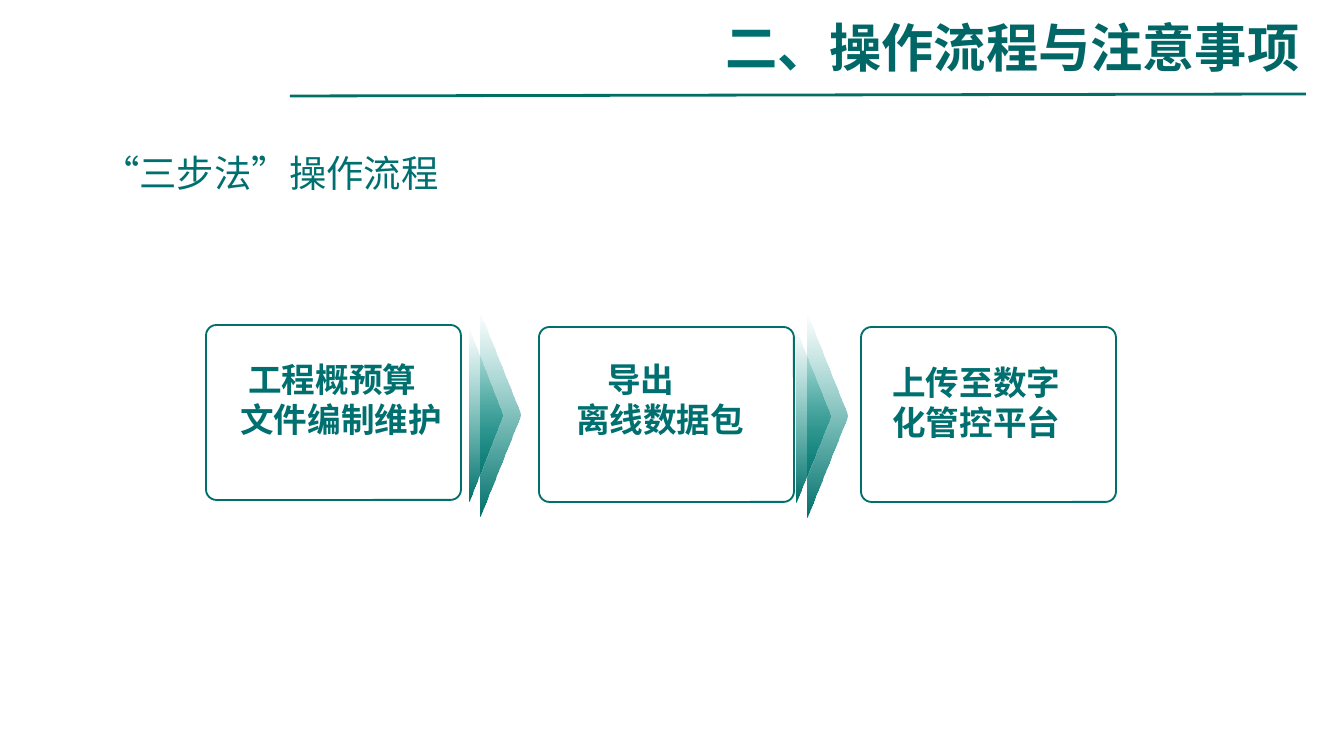
from lxml import etree
from pptx import Presentation
from pptx.dml.color import RGBColor
from pptx.enum.shapes import MSO_CONNECTOR, MSO_SHAPE
from pptx.enum.text import MSO_ANCHOR, PP_ALIGN
from pptx.oxml import parse_xml
from pptx.oxml.ns import qn
from pptx.util import Emu, Pt

SCALE = 914400 / 134.4
FONT = "Noto Sans CJK SC"
TEXT_COLOR = "006F6F"
BORDER_COLOR = "00706B"
DRAWING_NS = "http://schemas.openxmlformats.org/drawingml/2006/main"


def px(*lengths):
    return [Emu(round(length * SCALE)) for length in lengths]


def format_run(run, size, color, bold):
    run.font.size = Pt(size)
    run.font.bold = bold
    run.font.name = FONT
    run.font.color.rgb = RGBColor.from_string(color)
    etree.SubElement(run.font._element, qn("a:ea")).set("typeface", FONT)


presentation = Presentation()
presentation.slide_width, presentation.slide_height = px(1344, 756)
slide = presentation.slides.add_slide(presentation.slide_layouts[6])
shapes = slide.shapes

# Header rule and title
rule = shapes.add_connector(MSO_CONNECTOR.STRAIGHT, *px(290, 96, 1306, 94))
rule.line.color.rgb = RGBColor.from_string("006F68")
rule.line.width = Pt(1.5)
etree.SubElement(rule._element.spPr, qn("a:effectLst"))

title = shapes.add_shape(MSO_SHAPE.RECTANGLE, *px(712, 8, 606, 77))
title.shadow.inherit = False
title.fill.solid()
title.fill.fore_color.rgb = RGBColor.from_string("FFFFFF")
title.line.fill.background()
title.text_frame.word_wrap = True
title.text_frame.vertical_anchor = MSO_ANCHOR.MIDDLE
paragraph = title.text_frame.paragraphs[0]
paragraph.alignment = PP_ALIGN.LEFT
for text, color in (("二、", TEXT_COLOR), ("操作流程与注意事项", "006666")):
    run = paragraph.add_run()
    run.text = text
    format_run(run, 28, color, True)

# Subtitle
subtitle = shapes.add_textbox(*px(22, 126, 714, 140))
subtitle.text_frame.word_wrap = True
subtitle.text_frame.text = "“三步法”操作流程"
paragraph = subtitle.text_frame.paragraphs[0]
paragraph.line_spacing = 1.4
paragraph._p.get_or_add_pPr().set("indent", str(px(67)[0]))
format_run(paragraph.runs[0], 20, TEXT_COLOR, False)

# Steps: box left and top, text left, top and width, first-line indent, lines
steps = [
    (206, 325, 227, 352, 266, 8, ("工程概预算", "文件编制维护")),
    (539, 327, 563, 352, 223, 31, ("导出", "离线数据包")),
    (861, 327, 879, 355, 235, 0, ("上传至数字", "化管控平台")),
]
for left, top, text_left, text_top, text_width, indent, lines in steps:
    box = shapes.add_shape(MSO_SHAPE.ROUNDED_RECTANGLE, *px(left, top, 255, 175))
    box.adjustments[0] = 0.06
    box.shadow.inherit = False
    box.fill.background()
    box.line.color.rgb = RGBColor.from_string(BORDER_COLOR)
    box.line.width = Pt(1)

    label = shapes.add_textbox(*px(text_left, text_top, text_width, 124))
    label.text_frame.word_wrap = True
    label.text_frame.text = "\n".join(lines)
    first_paragraph = label.text_frame.paragraphs[0]
    first_paragraph._p.get_or_add_pPr().set("indent", str(px(indent)[0]))
    for paragraph in label.text_frame.paragraphs:
        format_run(paragraph.runs[0], 18, TEXT_COLOR, True)

# Double arrows between the steps, fading out towards the top
for arrow_left, arrow_top in ((470, 313), (797, 314)):
    for offset_x, offset_y, width, height in ((11, 0, 39, 204), (0, 16, 33, 172)):
        arrow = shapes.add_shape(
            MSO_SHAPE.PENTAGON,
            *px(arrow_left + offset_x, arrow_top + offset_y, width, height),
        )
        arrow.adjustments[0] = 1  # the point takes the full width: a triangle
        arrow.shadow.inherit = False
        arrow.line.fill.background()
        arrow.fill.background()
        gradient = parse_xml(
            f'<a:gradFill xmlns:a="{DRAWING_NS}"><a:gsLst>'
            '<a:gs pos="0"><a:srgbClr val="069489"><a:alpha val="0"/></a:srgbClr></a:gs>'
            f'<a:gs pos="100000"><a:srgbClr val="{BORDER_COLOR}"/></a:gs>'
            '</a:gsLst><a:lin ang="5400000" scaled="0"/></a:gradFill>'
        )
        properties = arrow._element.spPr
        properties.replace(properties.find(qn("a:noFill")), gradient)

presentation.save("out.pptx")
